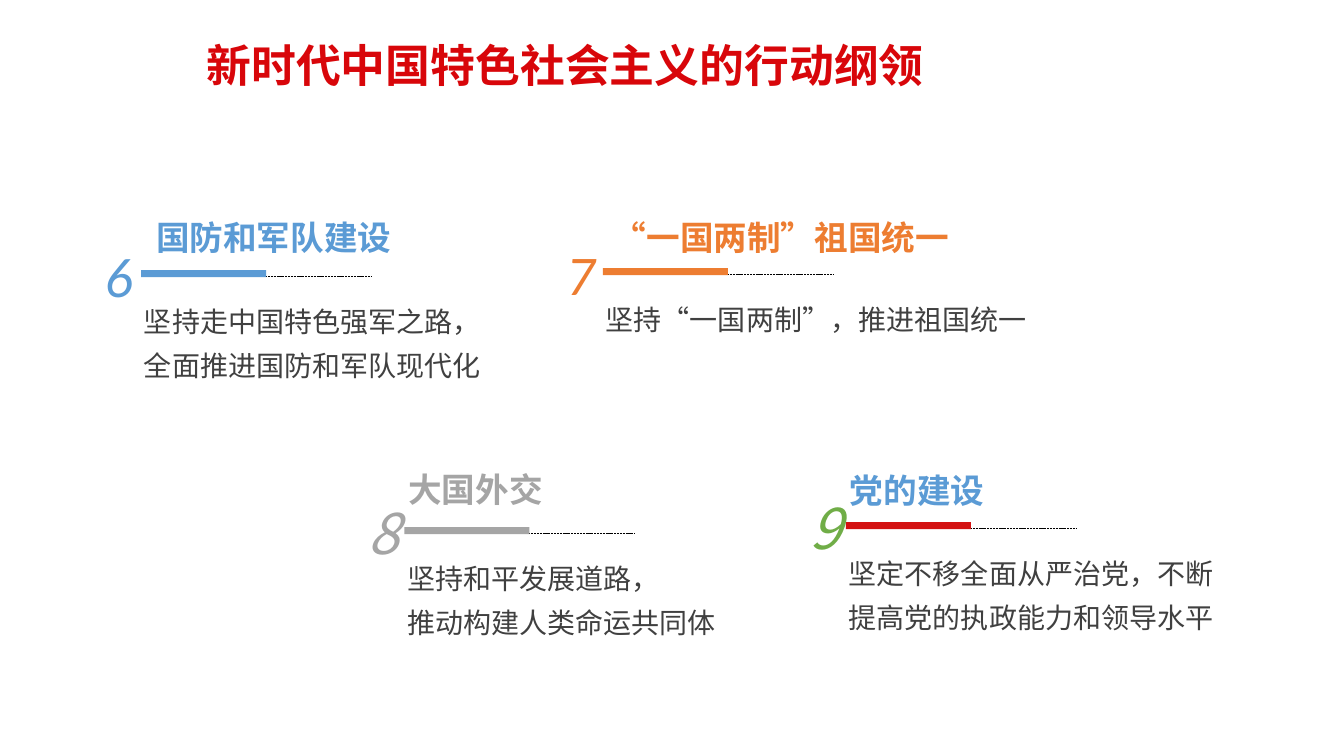
from lxml.etree import SubElement
from pptx import Presentation
from pptx.dml.color import RGBColor
from pptx.enum.dml import MSO_LINE as Dash
from pptx.enum.shapes import MSO_CONNECTOR as Link, MSO_SHAPE as Shape
from pptx.enum.text import PP_ALIGN as Align
from pptx.oxml.ns import qn
from pptx.util import Inches, Pt

TITLE = RGBColor(0xD8, 0x06, 0x0A)
BLUE = RGBColor(0x5B, 0x9B, 0xD5)
ORANGE = RGBColor(0xED, 0x7D, 0x31)
GRAY = RGBColor(0xA5, 0xA5, 0xA5)
GREEN = RGBColor(0x70, 0xAD, 0x47)
RED = RGBColor(0xD3, 0x11, 0x11)
DARK = RGBColor(0x40, 0x40, 0x40)
BLACK = RGBColor(0, 0, 0)
HAN = "Noto Sans CJK SC"
LATIN = "Calibri"


class Deck:
    """Hold the style and the current slide, and draw each kind of element."""

    def __init__(self):
        self.prs = Presentation()
        self.prs.slide_width = Inches(13.33)
        self.prs.slide_height = Inches(7.5)
        self.slide = self.prs.slides.add_slide(self.prs.slide_layouts[6])

    def text(self, host, at, lines, size, color, face=HAN, bold=None,
             italic=None, space=None, align=Align.LEFT):
        frame = host.shapes.add_textbox(*map(Inches, at)).text_frame
        frame.word_wrap = True
        frame.text = lines
        for para in frame.paragraphs:
            para.alignment = align
            para.line_spacing = space
            font = para.font
            font.size, font.bold, font.italic = Pt(size), bold, italic
            font.color.rgb = color
            font.name = face
            props = para._p.pPr.find(qn("a:defRPr"))
            SubElement(props, qn("a:ea")).set("typeface", face)

    def rule(self, host, x, y, width):
        line = host.shapes.add_connector(
            Link.STRAIGHT, Inches(x), Inches(y), Inches(x + width), Inches(y))
        line.line.color.rgb = BLACK
        line.line.width = Pt(0.5)
        line.line.dash_style = Dash.SQUARE_DOT
        SubElement(line._element.spPr, qn("a:effectLst"))

    def bar(self, host, at, color):
        rect = host.shapes.add_shape(Shape.RECTANGLE, *map(Inches, at))
        rect.shadow.inherit = False
        rect.fill.solid()
        rect.fill.fore_color.rgb = color
        rect.line.fill.background()

    def item(self, x, y, num, face, ink, tint, body, width, height):
        group = self.slide.shapes.add_group_shape()
        self.rule(group, x + 1.18, y + 0.59, 1.57)
        self.bar(group, (x + 0.46, y + 0.53, 1.24, 0.07), tint)
        self.text(group, (x, y, 0.28, 0.91), num, 40, ink, face,
                  italic=True, space=1.3)
        self.text(group, (x + 0.39, y + 0.72, width, height), body, 20, DARK,
                  space=1.3)

    def head(self, at, label, color, align=Align.CENTER):
        self.text(self.slide, at, label, 24, color, bold=True, space=0.9,
                  align=align)


def main():
    deck = Deck()
    deck.text(deck.slide, (1.95, 0.33, 8.45, 0.64),
              "新时代中国特色社会主义的行动纲领", 32, TITLE, bold=True)
    items = [
        (0.94, 2.15, "6", LATIN, BLUE, BLUE,
         "坚持走中国特色强军之路，全面推进国防和军队现代化", 3.64, 0.97),
        (5.52, 2.13, "7", LATIN, ORANGE, ORANGE,
         "坚持“一国两制”，推进祖国统一", 4.49, 0.6),
        (3.55, 4.7, "8", HAN, GRAY, GRAY,
         "坚持和平发展道路，\n推动构建人类命运共同体", 3.28, 0.99),
        (7.93, 4.65, "9", HAN, GREEN, RED,
         "坚定不移全面从严治党，不断提高党的执政能力和领导水平", 3.84, 0.97),
    ]
    for item in items:
        deck.item(*item)
    deck.head((1.4, 2.15, 2.63, 0.46), "国防和军队建设", BLUE)
    deck.head((5.98, 2.15, 3.72, 0.46), "“一国两制”祖国统一", ORANGE, Align.LEFT)
    deck.head((3.94, 4.65, 1.55, 0.46), "大国外交", GRAY)
    deck.head((8.32, 4.66, 1.55, 0.46), "党的建设", BLUE)
    deck.prs.save("out.pptx")


if __name__ == "__main__":
    main()
